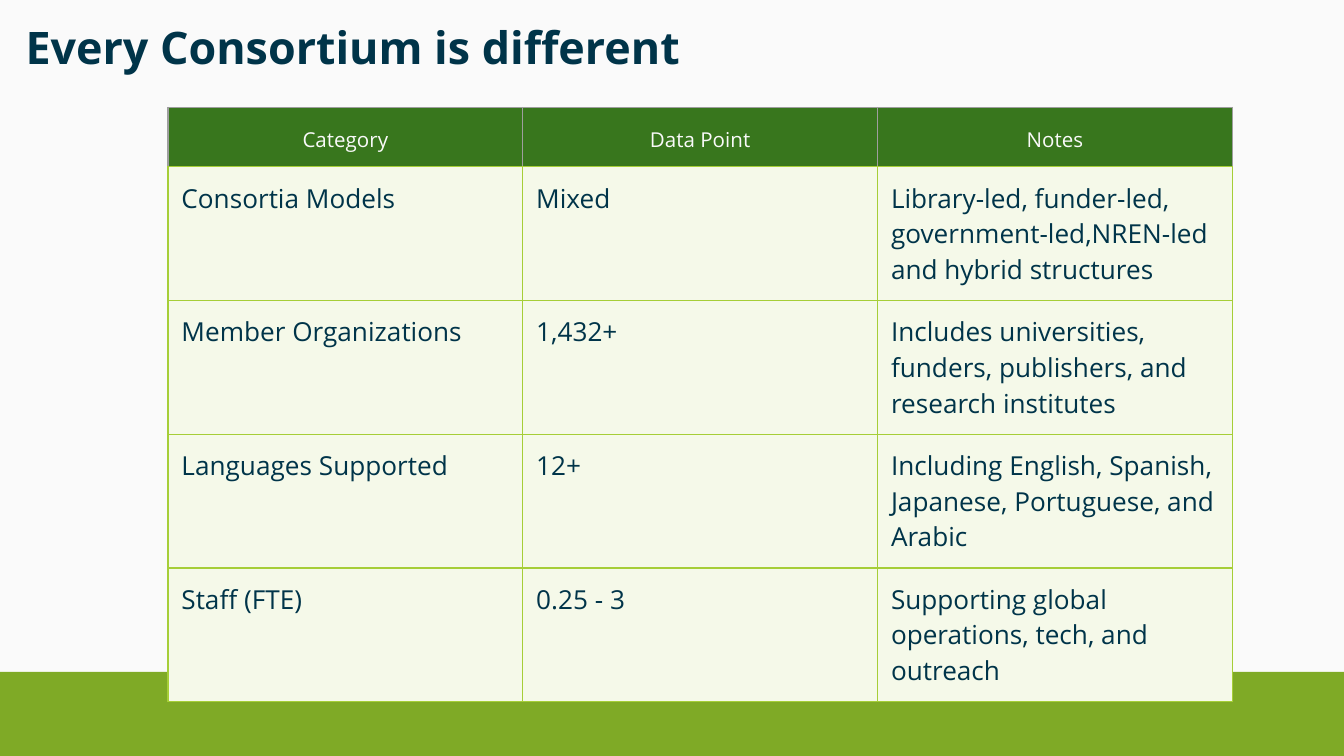
import dataclasses

import lxml.etree
import pptx
import pptx.dml.color
import pptx.enum.shapes
import pptx.enum.text
import pptx.oxml.ns
import pptx.util

WIDTH = 10
HEIGHT = WIDTH * 9 / 16
INSET = pptx.util.Inches(0.1)
FONT = "Open Sans"
NAVY, WHITE, GREEN, LIME, GREY = "003449", "FAFAFA", "7FAA26", "A6CE38", "9E9E9E"
ALIGN = pptx.enum.text.PP_ALIGN


@dataclasses.dataclass(frozen=True)
class CellStyle:
    fill: str
    color: str
    size: float
    align: ALIGN
    spacing: float
    borders: dict[str, str]


HEADER = CellStyle("38761D", WHITE, 11, ALIGN.CENTER, 1.15,
                   {"lnL": GREY, "lnR": GREY, "lnT": GREY, "lnB": LIME})
BODY = CellStyle("F5F9E9", NAVY, 14, ALIGN.LEFT, 1.0,
                 dict.fromkeys(("lnL", "lnR", "lnT", "lnB"), LIME))

ROWS = [
    ("Category", "Data Point", "Notes"),
    ("Consortia Models", "Mixed",
     "Library-led, funder-led, government-led,NREN-led and hybrid structures"),
    ("Member Organizations", "1,432+",
     "Includes universities, funders, publishers, and research institutes"),
    ("Languages Supported", "12+",
     "Including English, Spanish, Japanese, Portuguese, and Arabic"),
    ("Staff (FTE)", "0.25 - 3",
     "Supporting global operations, tech, and outreach"),
]


def rgb(value: str) -> pptx.dml.color.RGBColor:
    return pptx.dml.color.RGBColor.from_string(value)


def paint(fill, color: str) -> None:
    fill.solid()
    fill.fore_color.rgb = rgb(color)


def add_run(para, text: str, size: float, color: str, bold: bool = False) -> None:
    span = para.add_run()
    span.text = text
    span.font.name = FONT
    span.font.size = pptx.util.Pt(size)
    span.font.bold = bold
    span.font.color.rgb = rgb(color)


def add_borders(cell, borders: dict[str, str]) -> None:
    properties = cell._tc.get_or_add_tcPr()
    qn = pptx.oxml.ns.qn
    for position, (side, color) in enumerate(borders.items()):
        line = lxml.etree.Element(qn(f"a:{side}"), w=str(pptx.util.Pt(0.75)))
        solid = lxml.etree.SubElement(line, qn("a:solidFill"))
        lxml.etree.SubElement(solid, qn("a:srgbClr"), val=color)
        properties.insert(position, line)


def fill_cell(cell, text: str, style: CellStyle) -> None:
    cell.margin_left = cell.margin_right = INSET
    cell.margin_top = cell.margin_bottom = INSET
    paint(cell.fill, style.fill)
    add_borders(cell, style.borders)
    para = cell.text_frame.paragraphs[0]
    para.alignment = style.align
    para.line_spacing = style.spacing
    add_run(para, text, style.size, style.color)


def add_band(slide) -> None:
    inches = pptx.util.Inches
    band = slide.shapes.add_shape(pptx.enum.shapes.MSO_SHAPE.RECTANGLE,
                                  0, inches(5), inches(WIDTH), inches(HEIGHT - 5))
    band.shadow.inherit = False
    paint(band.fill, GREEN)
    band.line.fill.background()


def set_title(slide, text: str) -> None:
    title = slide.shapes.title
    title.left, title.top, title.width, title.height = map(
        pptx.util.Inches, (0.09, 0.05, 9.52, 0.56))
    frame = title.text_frame
    frame.margin_left = frame.margin_right = INSET
    frame.margin_top = frame.margin_bottom = INSET
    frame.auto_size = pptx.enum.text.MSO_AUTO_SIZE.NONE
    frame.vertical_anchor = pptx.enum.text.MSO_ANCHOR.TOP
    para = frame.paragraphs[0]
    para.alignment = ALIGN.LEFT
    add_run(para, text, 24, NAVY, bold=True)


def add_facts(slide) -> None:
    column_width, header_height, row_height = 2.64, 0.43, 0.99
    columns = len(ROWS[0])
    total_height = header_height + row_height * (len(ROWS) - 1)
    table = slide.shapes.add_table(len(ROWS), columns, *map(
        pptx.util.Inches, (1.25, 0.8, column_width * columns, total_height))).table
    table.horz_banding = False
    for column in table.columns:
        column.width = pptx.util.Inches(column_width)
    for index, texts in enumerate(ROWS):
        style = BODY if index else HEADER
        table.rows[index].height = pptx.util.Inches(row_height if index else header_height)
        for column, text in enumerate(texts):
            fill_cell(table.cell(index, column), text, style)


def main() -> None:
    deck = pptx.Presentation()
    deck.slide_width = pptx.util.Inches(WIDTH)
    deck.slide_height = pptx.util.Inches(HEIGHT)
    page = deck.slides.add_slide(deck.slide_layouts[5])
    paint(page.background.fill, WHITE)
    add_band(page)
    set_title(page, "Every Consortium is different")
    add_facts(page)
    deck.save("out.pptx")


if __name__ == "__main__":
    main()
